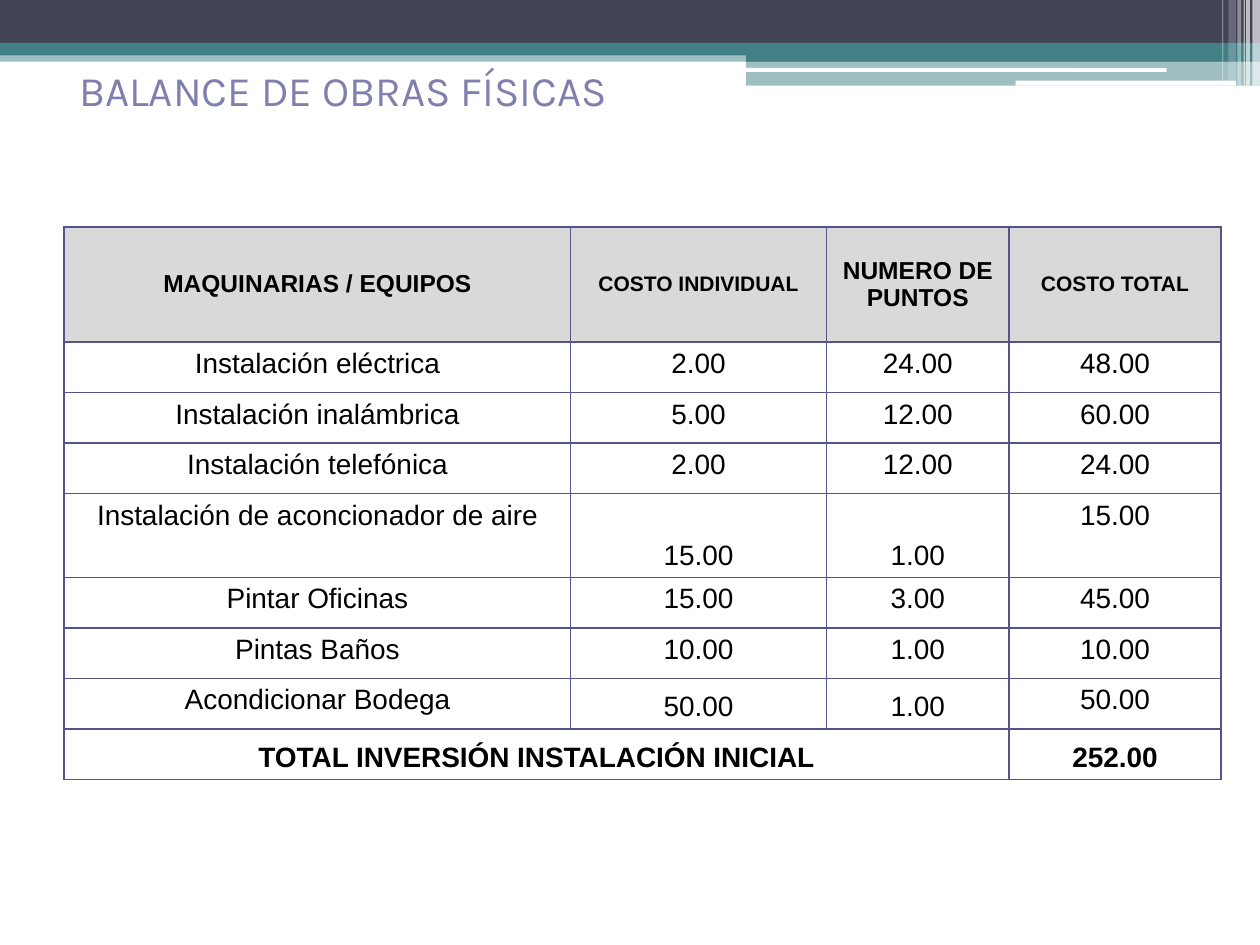
from collections import namedtuple

from lxml.etree import SubElement
from pptx import Presentation
from pptx.dml.color import RGBColor
from pptx.enum.shapes import MSO_SHAPE as Shape
from pptx.enum.text import MSO_ANCHOR as Anchor, PP_ALIGN as Align
from pptx.oxml.ns import qn
from pptx.util import Inches, Pt

# The page is a grid of 1000 columns by 750 rows
COLUMNS, ROWS = 1000, 750
PAGE_WIDTH, PAGE_HEIGHT = Inches(10), Inches(7.5)
UNIT = PAGE_WIDTH // COLUMNS

NAVY, TEAL, WHITE = "424456", "438086", "FFFFFF"
LILAC, VIOLET, GREY, BLACK = "8080AE", "53548A", "D9D9D9", "000000"

Box = namedtuple("Box", "left top width height")

# Banner parts: left, top, width, height, colour, opacity %
BANDS = [
    (0, 40, 1000, 9, TEAL, 50),
    (0, 0, 1000, 34, NAVY, 100),
    (0, 34, 1000, 10, TEAL, 100),
    (592, 39, 408, 10, TEAL, 100),
    (592, 48, 408, 20, TEAL, 50),
]
SLOTS = [(591, 54, 335, 3), (806, 64, 175, 4)]
# Stripes at the right end: left, width, height, opacity %
STRIPES = [
    (994, 6, 68, 65), (989, 3, 68, 65), (987, 1, 68, 60),
    (982, 3, 68, 40), (975, 6, 64, 20), (970, 1, 64, 30),
]

COLUMN_WIDTHS = [402, 203, 145, 168]
ROW_WEIGHTS = [91, 40, 40, 40, 66, 40, 40, 40, 40]
HEADINGS = [
    ("MAQUINARIAS / EQUIPOS", 14), ("COSTO INDIVIDUAL", 12),
    ("NUMERO DE PUNTOS", 14), ("COSTO TOTAL", 12),
]
# Item, unit cost, number of points, total, anchor of the middle columns
ITEMS = [
    ("Instalación eléctrica", "2.00", "24.00", "48.00", Anchor.TOP),
    ("Instalación inalámbrica", "5.00", "12.00", "60.00", Anchor.TOP),
    ("Instalación telefónica", "2.00", "12.00", "24.00", Anchor.TOP),
    ("Instalación de aconcionador de aire", "15.00", "1.00", "15.00", Anchor.BOTTOM),
    ("Pintar Oficinas", "15.00", "3.00", "45.00", Anchor.TOP),
    ("Pintas Baños", "10.00", "1.00", "10.00", Anchor.TOP),
    ("Acondicionar Bodega", "50.00", "1.00", "50.00", Anchor.BOTTOM),
]
TOTAL = ("TOTAL INVERSIÓN INSTALACIÓN INICIAL", "252.00")


def rgb(value):
    return RGBColor.from_string(value)


def place(box):
    return [round(length * UNIT) for length in box]


def add_span(para, text, color, **formats):
    span = para.add_run()
    span.text = text
    span.font.color.rgb = rgb(color)
    for name, value in formats.items():
        setattr(span.font, name, value)


def add_block(page, box, color, opacity=100, kind=Shape.RECTANGLE):
    block = page.shapes.add_shape(kind, *place(box))
    block.shadow.inherit = False
    block.fill.solid()
    block.fill.fore_color.rgb = rgb(color)
    block.line.fill.background()
    if opacity < 100:
        tint = block.fill._xPr.find(".//" + qn("a:srgbClr"))
        SubElement(tint, qn("a:alpha"), val=str(opacity * 1000))


def add_banner(page, box):
    def inside(left, top, width, height):
        return Box(box.left + left, box.top + top, width, height)

    for *area, color, opacity in BANDS:
        add_block(page, inside(*area), color, opacity)
    for area in SLOTS:
        add_block(page, inside(*area), WHITE, kind=Shape.ROUNDED_RECTANGLE)
    for left, width, height, opacity in STRIPES:
        add_block(page, inside(left, 0, width, height), WHITE, opacity)


def add_title(page, box):
    frame = page.shapes.add_textbox(*place(box)).text_frame
    frame.word_wrap = True
    frame.vertical_anchor = Anchor.MIDDLE
    para = frame.paragraphs[0]
    para._p.get_or_add_pPr().set("marL", str(53 * UNIT))
    add_span(para, "BALANCE DE OBRAS FÍSICAS", LILAC, name="Karla", size=Pt(24))
    # The larger closing space sets the height of the line
    add_span(para, " ", LILAC, name="Karla", size=Pt(40))


def add_borders(cell):
    properties = cell._tc.get_or_add_tcPr()
    for position, side in enumerate(("lnL", "lnR", "lnT", "lnB")):
        line = SubElement(properties, qn("a:" + side), w=str(Pt(1)))
        fill = SubElement(line, qn("a:solidFill"))
        SubElement(fill, qn("a:srgbClr"), val=VIOLET)
        properties.remove(line)
        properties.insert(position, line)


def fill_cell(cell, text, size=16, bold=False, anchor=Anchor.TOP):
    cell.vertical_anchor = anchor
    para = cell.text_frame.paragraphs[0]
    para.alignment = Align.CENTER
    add_span(para, text, BLACK, name="Arial", size=Pt(size), bold=bold)


def add_cost_table(page, box):
    frame = page.shapes.add_table(len(ROW_WEIGHTS), len(COLUMN_WIDTHS), *place(box))
    table = frame.table
    table.first_row = table.horz_banding = False
    for column, width in zip(table.columns, COLUMN_WIDTHS):
        column.width = round(box.width * UNIT * width / sum(COLUMN_WIDTHS))
    for row, weight in zip(table.rows, ROW_WEIGHTS):
        row.height = round(box.height * UNIT * weight / sum(ROW_WEIGHTS))
    for cell in table.iter_cells():
        cell.fill.background()
        add_borders(cell)

    # Heading row
    for cell, (text, size) in zip(table.rows[0].cells, HEADINGS):
        cell.fill.solid()
        cell.fill.fore_color.rgb = rgb(GREY)
        fill_cell(cell, text, size, True, Anchor.MIDDLE)

    # One row for each item
    for index, (*texts, middle) in enumerate(ITEMS, 1):
        anchors = (Anchor.TOP, middle, middle, Anchor.TOP)
        for cell, text, anchor in zip(table.rows[index].cells, texts, anchors):
            fill_cell(cell, text, anchor=anchor)

    # Total row
    last = len(ROW_WEIGHTS) - 1
    table.cell(last, 0).merge(table.cell(last, 2))
    for column, text in zip((0, 3), TOTAL):
        fill_cell(table.cell(last, column), text, bold=True, anchor=Anchor.BOTTOM)


def main():
    deck = Presentation()
    deck.slide_width, deck.slide_height = PAGE_WIDTH, PAGE_HEIGHT
    page = deck.slides.add_slide(deck.slide_layouts[6])
    add_banner(page, Box(0, 0, COLUMNS, 68))
    add_title(page, Box(0, 0, 900, ROWS / 6))
    add_cost_table(page, Box(51, 180, 918, 439))
    deck.save("out.pptx")


if __name__ == "__main__":
    main()
